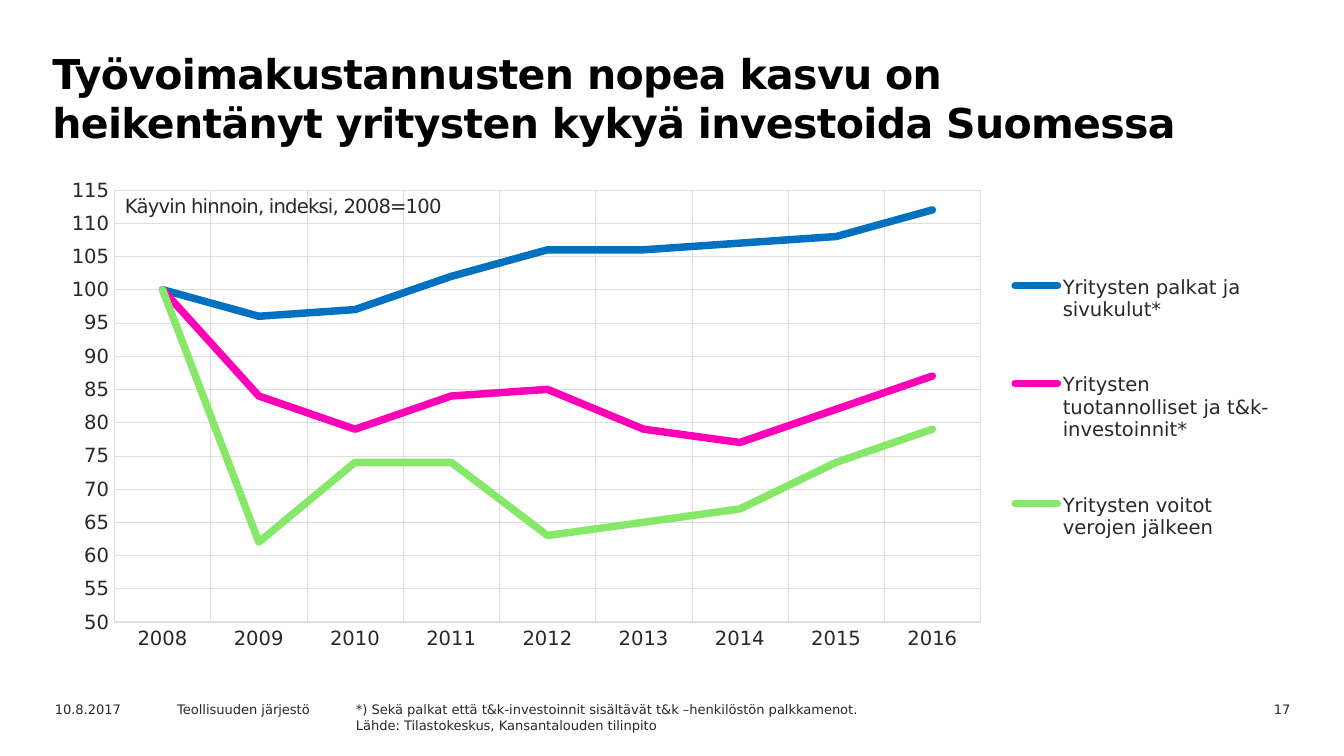
"""Build the slide on labour costs and company investment in Finland."""
import pptx
import pptx.chart.data
import pptx.dml.color
import pptx.enum.chart
import pptx.enum.text
import pptx.oxml
import pptx.oxml.ns
import pptx.util
from pptx.util import Inches

RGBColor = pptx.dml.color.RGBColor
ALIGN = pptx.enum.text.PP_ALIGN
BLACK = RGBColor(0x00, 0x00, 0x00)
INK = RGBColor(0x29, 0x28, 0x2E)
GRID = RGBColor(0xDE, 0xDD, 0xE1)
BLUE = RGBColor(0x00, 0x70, 0xC0)
PINK = RGBColor(0xFF, 0x00, 0xB8)
GREEN = RGBColor(0x85, 0xE8, 0x69)

YEARS = [str(year) for year in range(2008, 2017)]
SERIES = [
    ("Yritysten palkat ja sivukulut*", BLUE,
     (100, 96, 97, 102, 106, 106, 107, 108, 112)),
    ("Yritysten tuotannolliset ja t&k-investoinnit*", PINK,
     (100, 84, 79, 84, 85, 79, 77, 82, 87)),
    ("Yritysten voitot verojen jälkeen", GREEN,
     (100, 62, 74, 74, 63, 65, 67, 74, 79)),
]


class Deck:
    """Hold the style and the current slide."""

    font = "DejaVu Sans"

    def __init__(self, width):
        """Open a 16:9 presentation with one title-only slide."""
        self.prs = pptx.Presentation()
        self.prs.slide_width = Inches(width)
        self.prs.slide_height = Inches(width) * 9 // 16
        self.s = self.prs.slides.add_slide(self.prs.slide_layouts[5])

    def style(self, font, size, color=INK, bold=False):
        """Format a font."""
        values = {"name": self.font, "size": pptx.util.Pt(size), "bold": bold}
        for name, value in values.items():
            setattr(font, name, value)
        font.color.rgb = color

    def place(self, sp, box):
        """Move a shape to left, top, width and height."""
        for name, value in zip(("left", "top", "width", "height"), box):
            setattr(sp, name, Inches(value))

    def fill(self, sp, lines, size, color=INK, bold=False, align=ALIGN.LEFT,
             spacing=0, inset=(0.1, 0.05)):
        """Write paragraphs into a shape."""
        tf = sp.text_frame
        x, y = (Inches(value) for value in inset)
        values = {"word_wrap": True, "auto_size": pptx.enum.text.MSO_AUTO_SIZE.NONE,
                  "vertical_anchor": pptx.enum.text.MSO_ANCHOR.TOP,
                  "margin_left": x, "margin_right": x,
                  "margin_top": y, "margin_bottom": y}
        for name, value in values.items():
            setattr(tf, name, value)
        for i, line in enumerate(lines):
            p = tf.add_paragraph() if i else tf.paragraphs[0]
            p.alignment = align
            r = p.add_run()
            r.text = line
            self.style(r.font, size, color, bold)
            if spacing:
                r._r.get_or_add_rPr().set("spc", str(round(spacing * 100)))

    def title(self, text, box):
        """Place and write the title."""
        sp = self.s.shapes.title
        self.place(sp, box)
        self.fill(sp, [text], 22, BLACK, True, spacing=-0.35, inset=(0.11, 0.05))

    def text(self, lines, box, size=7, **options):
        """Add a text box."""
        sp = self.s.shapes.add_textbox(*map(Inches, box))
        self.fill(sp, lines, size, **options)

    def layout(self, parent, after, box, inner=False):
        """Fix the position of a chart part as fractions of the chart."""
        for old in parent.findall(pptx.oxml.ns.qn("c:layout")):
            parent.remove(old)
        target = '<c:layoutTarget val="inner"/>' if inner else ""
        modes = "".join(f'<c:{n}Mode val="edge"/>' for n in "xy")
        sizes = "".join(f'<c:{n} val="{v}"/>' for n, v in zip("xywh", box))
        node = pptx.oxml.parse_xml(
            f'<c:layout {pptx.oxml.ns.nsdecls("c")}><c:manualLayout>'
            f'{target}{modes}{sizes}</c:manualLayout></c:layout>')
        parent.insert(after, node)

    def axis(self, axis):
        """Format an axis and its gridlines."""
        axis.major_tick_mark = axis.minor_tick_mark = pptx.enum.chart.XL_TICK_MARK.NONE
        axis.has_major_gridlines = True
        line = axis.major_gridlines.format.line
        line.color.rgb, line.width = GRID, pptx.util.Pt(0.25)
        self.style(axis.tick_labels.font, 10.5)

    def line_chart(self, cats, series, box):
        """Add a line chart with a legend on the right."""
        data = pptx.chart.data.CategoryChartData(number_format="#,##0")
        data.categories = cats
        for name, _, values in series:
            data.add_series(name, values)
        chart = self.s.shapes.add_chart(
            pptx.enum.chart.XL_CHART_TYPE.LINE, *map(Inches, box), data).chart
        chart.has_title = False
        self.style(chart.font, 10.5)
        chart.plots[0].vary_by_categories = False
        for ser, (_, color, _) in zip(chart.plots[0].series, series):
            ser.smooth = False
            ser.marker.style = pptx.enum.chart.XL_MARKER_STYLE.NONE
            line = ser.format.line
            line.color.rgb, line.width = color, pptx.util.Pt(4)
            line._ln.set("cap", "rnd")
        self.axis(chart.category_axis)
        line = chart.category_axis.format.line
        line.color.rgb, line.width = GRID, pptx.util.Pt(0.75)
        axis = chart.value_axis
        self.axis(axis)
        axis.format.line.fill.background()
        scale = {"minimum_scale": 50, "maximum_scale": 115, "major_unit": 5}
        for name, value in scale.items():
            setattr(axis, name, value)
        axis.tick_labels.number_format = "#,##0"
        axis.tick_labels.number_format_is_linked = False
        chart.has_legend = True
        legend = chart.legend
        legend.position = pptx.enum.chart.XL_LEGEND_POSITION.RIGHT
        legend.include_in_layout = False
        self.style(legend.font, 10.5)
        self.layout(legend._element, 1, (0.77, 0.09, 0.22, 0.73))
        plot_area = chart._chartSpace.chart.plotArea
        self.layout(plot_area, 0, (0.047, 0.025, 0.702, 0.855), inner=True)


def main():
    """Build and save the slide."""
    deck = Deck(10)
    deck.title("Työvoimakustannusten nopea kasvu on heikentänyt "
               "yritysten kykyä investoida Suomessa", (0.28, 0.31, 8.74, 0.71))
    deck.line_chart(YEARS, SERIES, (0.42, 1.32, 9.18, 3.76))
    deck.text(["Käyvin hinnoin, indeksi, 2008=100"], (0.89, 1.4, 3.94, 0.26),
              10.5, spacing=-0.4, inset=(0.04, 0.04))
    deck.text(["10.8.2017"], (0.31, 5.17, 1, 0.18))
    deck.text(["Teollisuuden järjestö"], (1.22, 5.17, 1.42, 0.18))
    deck.text(["*) Sekä palkat että t&k-investoinnit sisältävät "
               "t&k –henkilöstön palkkamenot.",
               "Lähde: Tilastokeskus, Kansantalouden tilinpito"],
              (2.55, 5.17, 5, 0.45))
    deck.text(["17"], (8.76, 5.17, 0.94, 0.18), align=ALIGN.RIGHT)
    deck.prs.save("out.pptx")


if __name__ == "__main__":
    main()
